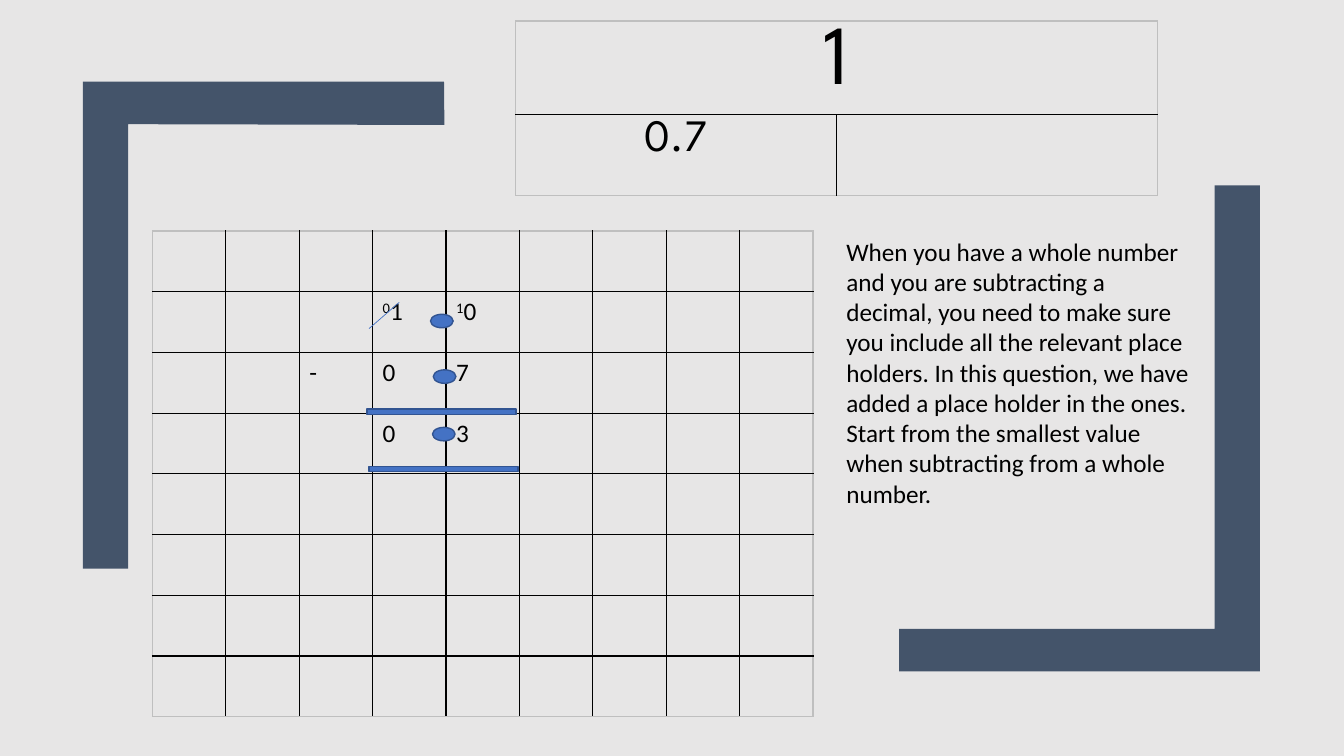
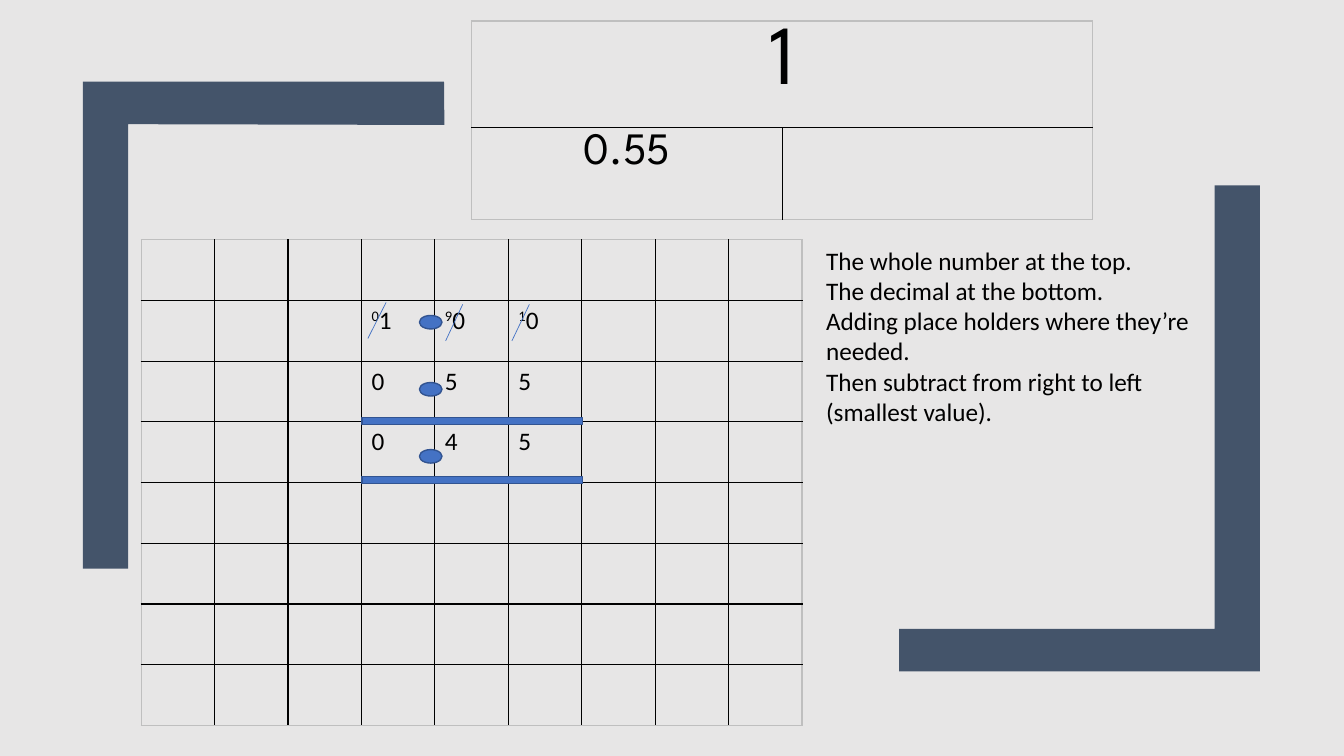
from lxml.etree import SubElement
from pptx import Presentation
from pptx.dml.color import RGBColor
from pptx.enum.shapes import MSO_CONNECTOR, MSO_SHAPE
from pptx.enum.text import PP_ALIGN
from pptx.oxml.ns import qn
from pptx.util import Cm, Pt

THEME = {
    "paper": RGBColor.from_string("E7E6E6"),
    "bracket": RGBColor.from_string("44546A"),
    "accent": RGBColor.from_string("4472C4"),
    "accent_edge": RGBColor.from_string("325491"),
    "ink": RGBColor.from_string("000000"),
    "frame": RGBColor.from_string("BFBFBF"),
    "whole": {"name": "League Spartan", "size": Pt(60)},
    "part": {"name": "League Spartan", "size": Pt(32)},
    "body": {"name": "Calibri", "size": Pt(18)},
    "edge_width": Pt(1),
    "stroke_width": Pt(0.5),
}

BRACKETS = [
    [(30.61, 4.67), (31.75, 4.67), (31.75, 16.92), (22.66, 16.92), (22.66, 15.85), (30.61, 15.85)],
    [(3.23, 14.33), (2.09, 14.33), (2.09, 2.06), (11.19, 2.06), (11.2, 3.15), (3.23, 3.13)],
]

GRID_COLUMNS, GRID_ROWS = [1.85] * 9, [1.53] * 8
DOT_SIZE = (0.57, 0.34)

LESSONS = [
    {
        "part": "0.7",
        "bar_model": {"left": 13, "top": 0.53, "columns": [8.08] * 2, "rows": [2.36, 2.03]},
        "grid": {"left": 3.84, "top": 5.82, "columns": GRID_COLUMNS, "rows": GRID_ROWS},
        "sum": {
            (1, 3): ("0", "1"), (1, 4): ("1", "0"),
            (2, 2): ("", "-"), (2, 3): ("", "0"), (2, 4): ("", "7"),
            (3, 3): ("", "0"), (3, 4): ("", "3"),
        },
        "rules": [(9.25, 10.31), (9.3, 11.76)],
        "rule_size": (3.76, 0.13),
        "dots": [(10.85, 7.92), (10.92, 9.32), (10.9, 10.77)],
        "strokes": [(10.06, 7.62, 9.3, 8.28)],
        "note_at": (21.08, 5.82, 9.27, 7.19),
        "note": [
            "When you have a whole number and you are subtracting a decimal, you need to make sure "
            "you include all the relevant place holders. In this question, we have added a place "
            "holder in the ones.",
            "Start from the smallest value when subtracting from a whole number.",
        ],
    },
    {
        "part": "0.55",
        "bar_model": {"left": 11.89, "top": 0.53, "columns": [7.82] * 2, "rows": [2.69, 2.31]},
        "grid": {"left": 3.56, "top": 6.04, "columns": GRID_COLUMNS, "rows": GRID_ROWS},
        "sum": {
            (1, 3): ("0", "1"), (1, 4): ("9", "0"), (1, 5): ("1", "0"),
            (2, 3): ("", "0"), (2, 4): ("", "5"), (2, 5): ("", "5"),
            (3, 3): ("", "0"), (3, 4): ("", "4"), (3, 5): ("", "5"),
        },
        "rules": [(9.12, 10.52), (9.12, 12.01)],
        "rule_size": (5.56, 0.18),
        "dots": [(10.57, 7.95 + 1.69 * step) for step in range(3)],
        "strokes": [
            (13.34, 7.67, 12.9, 8.59),
            (11.66, 7.67, 11.23, 8.59),
            (9.73, 7.62, 9.27, 8.53),
        ],
        "note_at": (20.57, 6.05, 9.68, 5.64),
        "note": [
            "The whole number at the top.",
            "The decimal at the bottom.",
            "Adding place holders where they’re needed.",
            "Then subtract from right to left (smallest value).",
        ],
    },
]


def write_span(para, text, style):
    span = para.add_run()
    span.text = text
    span.font.color.rgb = THEME["ink"]
    for key, value in style.items():
        setattr(span.font, key, value)
    return span


def draw_table(page, left, top, columns, rows, merge_first_row=False):
    table = page.shapes.add_table(
        len(rows), len(columns), Cm(left), Cm(top), Cm(sum(columns)), Cm(sum(rows))
    ).table
    table.first_row = table.horz_banding = False
    for column, width in zip(table.columns, columns):
        column.width = Cm(width)
    for row, height in zip(table.rows, rows):
        row.height = Cm(height)
    if merge_first_row:
        table.cell(0, 0).merge(table.cell(0, len(columns) - 1))
    for row in range(len(rows)):
        for column in range(len(columns)):
            cell = table.cell(row, column)
            if not cell.is_spanned:
                outer_sides = {
                    "a:lnL": column == 0,
                    "a:lnR": column + cell.span_width == len(columns),
                    "a:lnT": row == 0,
                    "a:lnB": row == len(rows) - 1,
                }
                properties = cell._tc.get_or_add_tcPr()
                for side, is_outer in outer_sides.items():
                    border = SubElement(properties, qn(side), w=str(THEME["edge_width"]))
                    fill = SubElement(border, qn("a:solidFill"))
                    color = THEME["frame"] if is_outer else THEME["ink"]
                    SubElement(fill, qn("a:srgbClr"), val=str(color))
            cell.fill.background()
    return table


deck = Presentation()
deck.slide_width, deck.slide_height = Cm(33.87), Cm(19.05)
master = deck.slide_master
master.background.fill.solid()
master.background.fill.fore_color.rgb = THEME["paper"]
pages = [deck.slides.add_slide(deck.slide_layouts[6]) for lesson in LESSONS]

for number, corners in enumerate(BRACKETS):
    points = [(Cm(x), Cm(y)) for x, y in corners]
    builder = pages[0].shapes.build_freeform(*points[0])
    builder.add_line_segments(points[1:], close=True)
    bracket = builder.convert_to_shape()
    bracket.shadow.inherit = False
    bracket.fill.solid()
    bracket.fill.fore_color.rgb = THEME["bracket"]
    bracket.line.fill.background()
    bracket.name = f"Bracket {number + 1}"
    bracket.element.xpath("./p:nvSpPr/p:cNvPr")[0].set("id", str(100 + number))
    master.shapes.element.append(bracket.element)

for page, lesson in zip(pages, LESSONS):
    bar_model = draw_table(page, **lesson["bar_model"], merge_first_row=True)
    for row, (text, style) in enumerate([("1", "whole"), (lesson["part"], "part")]):
        para = bar_model.cell(row, 0).text_frame.paragraphs[0]
        para.alignment = PP_ALIGN.CENTER
        write_span(para, text, THEME[style])

    grid = draw_table(page, **lesson["grid"])
    for (row, column), (carried, digit) in lesson["sum"].items():
        para = grid.cell(row, column).text_frame.paragraphs[0]
        if carried:
            span = write_span(para, carried, THEME["body"])
            span._r.get_or_add_rPr().set("baseline", "30000")
        write_span(para, digit, THEME["body"])

    marks = [(MSO_SHAPE.RECTANGLE, place, lesson["rule_size"]) for place in lesson["rules"]]
    marks += [(MSO_SHAPE.OVAL, place, DOT_SIZE) for place in lesson["dots"]]
    for kind, place, size in marks:
        mark = page.shapes.add_shape(kind, *[Cm(value) for value in place + size])
        mark.shadow.inherit = False
        mark.fill.solid()
        mark.fill.fore_color.rgb = THEME["accent"]
        mark.line.color.rgb = THEME["accent_edge"]
        mark.line.width = THEME["edge_width"]

    for ends in lesson["strokes"]:
        stroke = page.shapes.add_connector(MSO_CONNECTOR.STRAIGHT, *[Cm(value) for value in ends])
        stroke.line.color.rgb = THEME["accent"]
        stroke.line.width = THEME["stroke_width"]
        SubElement(stroke.element.spPr, qn("a:effectLst"))

    box = page.shapes.add_textbox(*[Cm(value) for value in lesson["note_at"]])
    frame = box.text_frame
    frame.word_wrap = True
    for index, text in enumerate(lesson["note"]):
        para = frame.add_paragraph() if index else frame.paragraphs[0]
        write_span(para, text, THEME["body"])

deck.save("out.pptx")
